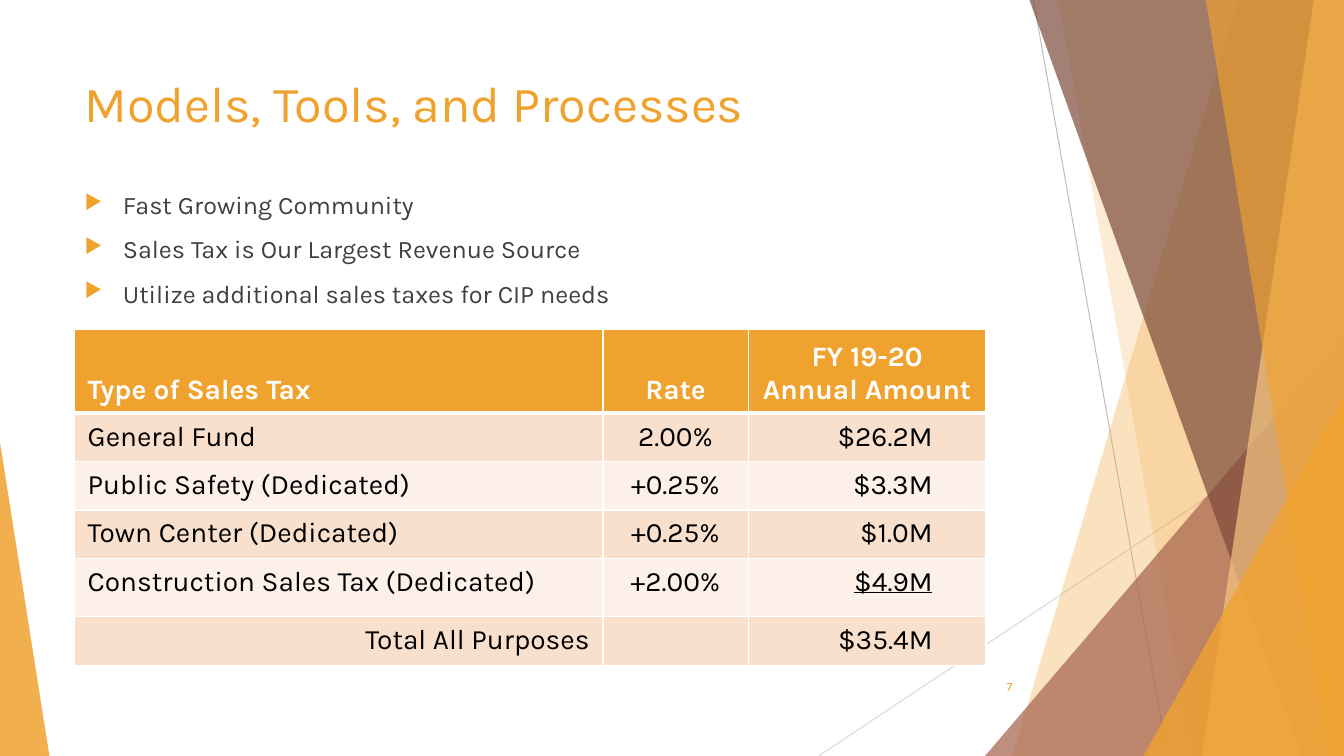
import pptx
import pptx.util
import pptx.dml.color
import pptx.enum.shapes
import pptx.enum.text
import pptx.oxml
import pptx.oxml.ns
import lxml.etree

Inches = pptx.util.Inches
Pt = pptx.util.Pt
ALIGN = pptx.enum.text.PP_ALIGN
ANCHOR = pptx.enum.text.MSO_ANCHOR
qn = pptx.oxml.ns.qn

FONT = "Karla"
COLORS = {
    "orange": "F0A22E", "light orange": "F6C782", "rust": "A5644E", "brown": "7C4B3B",
    "gray line": "BFBFBF", "pale line": "D9D9D9", "body": "404040",
    "white": "FFFFFF", "black": "000000", "dark band": "F9E0CD", "light band": "FCF0E8",
}


def fill_shape(shape, color, opacity):
    shape.shadow.inherit = False
    shape.line.fill.background()
    shape.fill.solid()
    shape.fill.fore_color.rgb = pptx.dml.color.RGBColor.from_string(COLORS[color])
    color_element = shape.fill._xPr.find(qn("a:solidFill"))[0]
    lxml.etree.SubElement(color_element, qn("a:alpha")).set("val", str(opacity * 1000))


def style_text(paragraph, size, color, align=ALIGN.LEFT, bold=False):
    paragraph.alignment = align
    paragraph.font.name = FONT
    paragraph.font.size = Pt(size)
    paragraph.font.bold = bold
    paragraph.font.color.rgb = pptx.dml.color.RGBColor.from_string(COLORS[color])


presentation = pptx.Presentation()
presentation.slide_width = Inches(13.33)
presentation.slide_height = Inches(7.5)
slide = presentation.slides.add_slide(presentation.slide_layouts[6])

# Thin background lines
for x1, y1, x2, y2, color in [
    (10.25, 0, 11.58, 7.5, "gray line"),
    (13.33, 4.03, 8.12, 7.5, "pale line"),
]:
    connector = slide.shapes.add_connector(
        pptx.enum.shapes.MSO_CONNECTOR.STRAIGHT, Inches(x1), Inches(y1), Inches(x2), Inches(y2))
    connector.line.width = Pt(0.75)
    connector.line.color.rgb = pptx.dml.color.RGBColor.from_string(COLORS[color])
    lxml.etree.SubElement(connector._element.spPr, qn("a:effectLst"))

# Facets: bands run from a top x and a bottom x to the right edge;
# triangles have left, top, width, height and apex position
for kind, geometry, color, opacity in [
    ("band", (12.28, 10.04), "orange", 30),
    ("band", (10.5, 11.83), "orange", 20),
    ("triangle", (9.77, 3.33, 3.56, 4.17, 1), "rust", 72),
    ("band", (10.21, 12.91), "brown", 70),
    ("band", (13.03, 11.92), "light orange", 70),
    ("band", (11.96, 13.18), "orange", 65),
    ("triangle", (11.34, 3.93, 1.99, 3.57, 1), "orange", 80),
    ("triangle", (0, 4.39, 0.49, 3.11, 0), "orange", 85),
]:
    if kind == "band":
        top_x, bottom_x = geometry
        builder = slide.shapes.build_freeform(Inches(top_x), 0)
        builder.add_line_segments([
            (Inches(x), Inches(y)) for x, y in [(13.33, 0), (13.33, 7.5), (bottom_x, 7.5)]])
        facet = builder.convert_to_shape()
    else:
        *box, apex = geometry
        facet = slide.shapes.add_shape(
            pptx.enum.shapes.MSO_SHAPE.ISOSCELES_TRIANGLE, *[Inches(value) for value in box])
        facet.adjustments[0] = apex
    fill_shape(facet, color, opacity)

# Title
title = slide.shapes.add_textbox(Inches(0.74), Inches(0.67), Inches(9.4), Inches(1.1))
title.text_frame.word_wrap = True
title.text_frame.text = "Models, Tools, and Processes"
style_text(title.text_frame.paragraphs[0], 36, "orange")

# Bullets
body = slide.shapes.add_textbox(Inches(0.74), Inches(1.83), Inches(9.4), Inches(1.4))
body.text_frame.word_wrap = True
body.text_frame.text = "\n".join([
    "Fast Growing Community",
    "Sales Tax is Our Largest Revenue Source",
    "Utilize additional sales taxes for CIP needs",
])
for paragraph in body.text_frame.paragraphs:
    style_text(paragraph, 18, "body")
    paragraph.space_before = Pt(10)
    properties = paragraph._p.get_or_add_pPr()
    properties.set("marL", str(Inches(0.38)))
    properties.set("indent", str(-Inches(0.38)))
    bullet = pptx.oxml.parse_xml(
        f'<a:bullet xmlns:a="http://schemas.openxmlformats.org/drawingml/2006/main">'
        f'<a:buClr><a:srgbClr val="{COLORS["orange"]}"/></a:buClr>'
        f'<a:buSzPct val="80000"/><a:buChar char="▶"/></a:bullet>')
    for element in list(bullet):
        properties.find(qn("a:defRPr")).addprevious(element)

# Slide number
number = slide.shapes.add_textbox(Inches(9.39), Inches(6.61), Inches(0.75), Inches(0.4))
number.text_frame.word_wrap = True
number.text_frame.vertical_anchor = ANCHOR.MIDDLE
number.text_frame.text = "7"
style_text(number.text_frame.paragraphs[0], 9, "orange", ALIGN.RIGHT)

# Sales tax table
rows = [
    ("Type of Sales Tax", "Rate", "FY 19-20\vAnnual Amount"),
    ("General Fund", "2.00%", "$26.2M"),
    ("Public Safety (Dedicated)", "+0.25%", "$3.3M"),
    ("Town Center (Dedicated)", "+0.25%", "$1.0M"),
    ("Construction Sales Tax (Dedicated)", "+2.00%", "$4.9M"),
    ("Total All Purposes", "", "$35.4M"),
]
column_widths = [5.24, 1.44, 2.36]
row_heights = [0.83, 0.48, 0.48, 0.48, 0.58, 0.48]
table = slide.shapes.add_table(
    len(rows), len(column_widths), Inches(0.74), Inches(3.27),
    Inches(sum(column_widths)), Inches(sum(row_heights))).table
for column, width in zip(table.columns, column_widths):
    column.width = Inches(width)
for row, height in zip(table.rows, row_heights):
    row.height = Inches(height)

for row_index, row_texts in enumerate(rows):
    header = row_index == 0
    for column_index, text in enumerate(row_texts):
        cell = table.cell(row_index, column_index)
        amount = column_index == 2 and not header
        cell.margin_left = Inches(0.13)
        cell.margin_right = Inches(0.53 if amount else 0.13)
        cell.margin_top = cell.margin_bottom = Inches(0.07)
        cell.vertical_anchor = ANCHOR.BOTTOM if header else ANCHOR.TOP

        cell.text = text
        align = [ALIGN.LEFT, ALIGN.CENTER, ALIGN.RIGHT if amount else ALIGN.CENTER][column_index]
        if text == "Total All Purposes":
            align = ALIGN.RIGHT
        paragraph = cell.text_frame.paragraphs[0]
        style_text(paragraph, 20, "white" if header else "black", align, header)
        if text == "$4.9M":
            paragraph.font.underline = True

        band = "orange" if header else "dark band" if row_index % 2 else "light band"
        cell.fill.solid()
        cell.fill.fore_color.rgb = pptx.dml.color.RGBColor.from_string(COLORS[band])

        # White borders, heavier under the header
        cell_properties = cell._tc.get_or_add_tcPr()
        for position, side in enumerate(["lnL", "lnR", "lnT", "lnB"]):
            heavy = (row_index, side) in [(0, "lnB"), (1, "lnT")]
            border = lxml.etree.Element(qn(f"a:{side}"), w=str(Pt(3 if heavy else 1)))
            border_fill = lxml.etree.SubElement(border, qn("a:solidFill"))
            lxml.etree.SubElement(border_fill, qn("a:srgbClr"), val=COLORS["white"])
            cell_properties.insert(position, border)

presentation.save("out.pptx")
